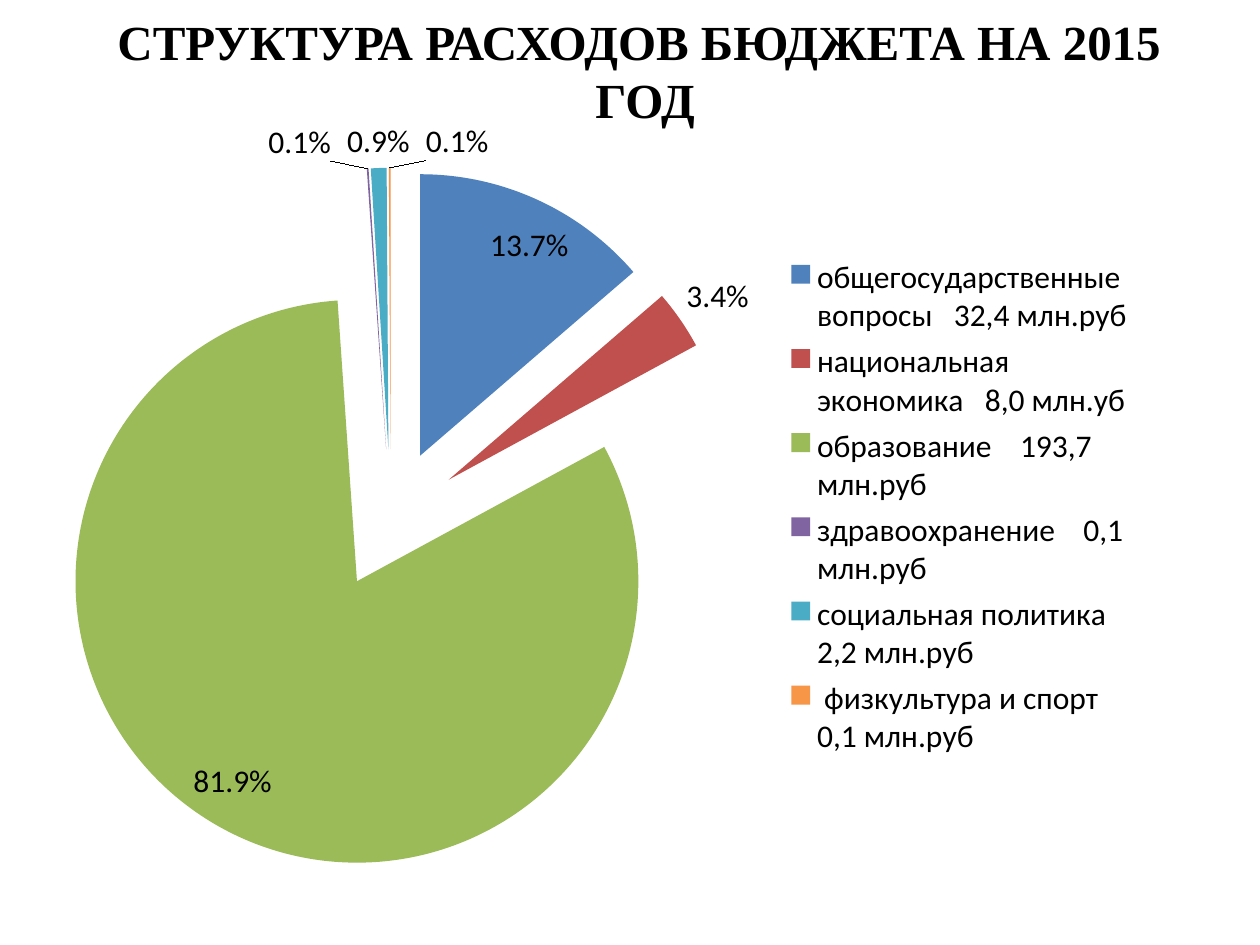
from lxml.etree import SubElement
from pptx import Presentation
from pptx.chart.data import CategoryChartData
from pptx.dml.color import RGBColor
from pptx.enum.chart import XL_CHART_TYPE as ChartType, XL_LABEL_POSITION as LabelSpot
from pptx.enum.chart import XL_LEGEND_POSITION as LegendSpot
from pptx.enum.text import MSO_ANCHOR as Anchor, PP_ALIGN as Align
from pptx.oxml import parse_xml
from pptx.oxml.ns import nsdecls, qn
from pptx.util import Inches, Pt

WIDTH, HEIGHT = Inches(10), Inches(7.5)
EXPENSES = [
    ("общегосударственные вопросы   32,4 млн.руб", 0.137, "4F81BD"),
    ("национальная экономика   8,0 млн.уб", 0.034, "C0504D"),
    ("образование    193,7 млн.руб", 0.819, "9BBB59"),
    ("здравоохранение    0,1 млн.руб", 0.001, "8064A2"),
    ("социальная политика  2,2 млн.руб", 0.009, "4BACC6"),
    (" физкультура и спорт   0,1 млн.руб", 0.001, "F79646"),
]
LABEL_SHIFTS = {3: -0.06, 5: 0.06}


def color(value):
    """Turn a hex string into a colour."""
    return RGBColor.from_string(value)


def set_font(font, name, size, bold=False):
    """Apply the black text style used on the slide."""
    font.name, font.size, font.bold = name, Pt(size), bold
    font.color.rgb = color("000000")


def shares(left, top, width, height):
    """Convert shares of the slide into lengths."""
    return [int(left * WIDTH), int(top * HEIGHT), int(width * WIDTH), int(height * HEIGHT)]


def layout(**values):
    """Build a manual chart layout from its settings."""
    node = parse_xml(f"<c:layout {nsdecls('c')}><c:manualLayout/></c:layout>")
    for name, value in values.items():
        SubElement(node[0], qn(f"c:{name}")).set("val", str(value))
    return node


def place(element, **values):
    """Give a plot area or legend its place within the chart."""
    for old in element.findall(qn("c:layout")):
        element.remove(old)
    index = 1 if element.find(qn("c:legendPos")) is not None else 0
    element.insert(index, layout(**values))


def add_title(page, text):
    """Add the centred heading."""
    box = page.shapes.add_textbox(*shares(0.059, -0.036, 0.906, 0.22))
    frame = box.text_frame
    frame.word_wrap = True
    frame.vertical_anchor = Anchor.MIDDLE
    para = frame.paragraphs[0]
    para.text = text
    para.alignment = Align.CENTER
    set_font(para.font, "Times New Roman", 28, True)


def add_labels(plot, series):
    """Show the percentages and move the crowded ones apart."""
    plot.has_data_labels = False
    labels = series.data_labels
    labels.show_value = True
    labels.number_format, labels.number_format_is_linked = "0.0%", False
    labels.position = LabelSpot.BEST_FIT
    set_font(labels.font, "Calibri", 18)
    leader = labels._element.find(qn("c:showLeaderLines"))
    if leader is None:
        leader = SubElement(labels._element, qn("c:showLeaderLines"))
    leader.set("val", "1")
    for index, shift in LABEL_SHIFTS.items():
        label = series.points[index].data_label
        label.position = LabelSpot.BEST_FIT
        node = labels._element.find(f"{qn('c:dLbl')}[{list(LABEL_SHIFTS).index(index) + 1}]")
        node.insert(1, layout(x=shift, y=0))


def add_pie(page):
    """Add the exploded pie of expenses with its legend."""
    names, values, fills = zip(*EXPENSES)
    data = CategoryChartData(number_format="0.0%")
    data.categories = names
    data.add_series("Series 1", values)
    chart = page.shapes.add_chart(
        ChartType.PIE_EXPLODED, *shares(0.02, 0.09, 0.893, 0.876), data).chart
    chart.has_title = False
    set_font(chart.font, "Calibri", 18)
    plot = chart.plots[0]
    plot.vary_by_categories = True
    series = plot.series[0]
    for index, fill in enumerate(fills):
        area = series.points[index].format.fill
        area.solid()
        area.fore_color.rgb = color(fill)
    for node in series._element.iter(qn("c:explosion")):
        node.set("val", "25")
    add_labels(plot, series)
    chart.has_legend = True
    chart.legend.position = LegendSpot.RIGHT
    chart.legend.include_in_layout = False
    place(chart.legend._element, xMode="edge", yMode="edge", x=0.67, y=0.2, w=0.32, h=0.62)
    place(chart._chartSpace.chart.plotArea, layoutTarget="inner", xMode="edge", yMode="edge",
          x=0.01, y=0.1, w=0.63, h=0.85)


def main():
    """Build and save the slide."""
    deck = Presentation()
    deck.slide_width, deck.slide_height = WIDTH, HEIGHT
    page = deck.slides.add_slide(deck.slide_layouts[6])
    add_pie(page)
    add_title(page, "СТРУКТУРА РАСХОДОВ БЮДЖЕТА НА 2015 \vГОД")
    deck.save("out.pptx")


if __name__ == "__main__":
    main()
